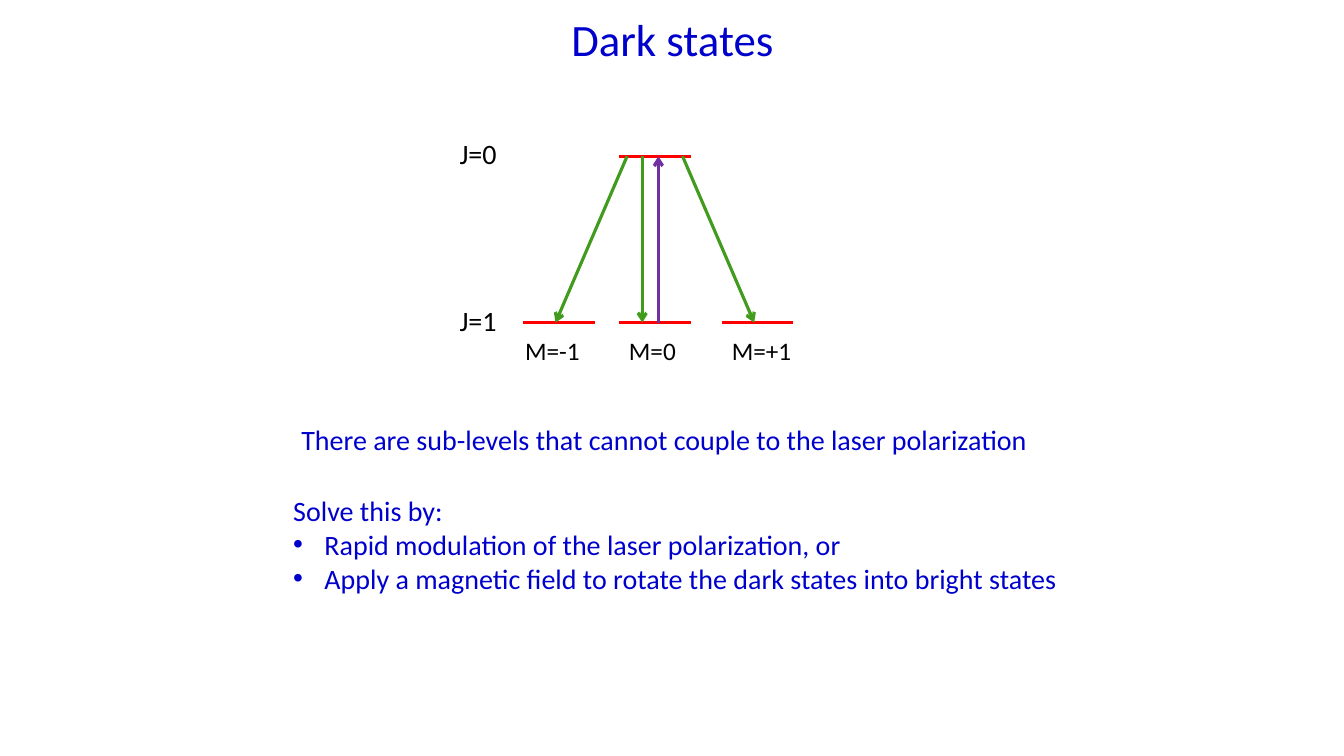
from lxml import etree
from pptx import Presentation
from pptx import util as u
from pptx.dml.color import RGBColor
from pptx.enum import shapes, text
from pptx.oxml.ns import qn

BLUE, BLACK = "0000CC", "000000"
RED, GREEN, PURPLE = "FF0000", "419B1D", "7030A0"
UPPER_Y, LOWER_Y = 1.55, 3.2
LEVEL_WIDTH = 0.71


def rgb(hex_colour):
    return RGBColor.from_string(hex_colour)


def add_text(slide, box, lines, size, colour, wrap=True,
             align=text.PP_ALIGN.LEFT, anchor=text.MSO_ANCHOR.TOP):
    label = slide.shapes.add_textbox(*(u.Inches(v) for v in box))
    frame = label.text_frame
    frame.text = "\n".join(lines)
    frame.word_wrap = wrap
    frame.vertical_anchor = anchor
    for paragraph in frame.paragraphs:
        paragraph.alignment = align
        for run in paragraph.runs:
            run.font.name = "Calibri"
            run.font.size = u.Pt(size)
            run.font.color.rgb = rgb(colour)
    return frame


def add_bullet(paragraph, indent=0.31):
    properties = paragraph._p.get_or_add_pPr()
    properties.set("marL", str(u.Inches(indent)))
    properties.set("indent", str(-u.Inches(indent)))
    etree.SubElement(properties, qn("a:buFont"), typeface="Arial")
    etree.SubElement(properties, qn("a:buChar"), char="•")


def add_line(slide, start, end, colour, arrow=False):
    line = slide.shapes.add_connector(
        shapes.MSO_CONNECTOR.STRAIGHT, *(u.Inches(v) for v in (*start, *end)))
    line.line.color.rgb = rgb(colour)
    line.line.width = u.Pt(2.25)
    if arrow:
        etree.SubElement(line.line._get_or_add_ln(), qn("a:tailEnd"), type="arrow")
    etree.SubElement(line._element.spPr, qn("a:effectLst"))


def add_level(slide, left, y):
    add_line(slide, (left, y), (left + LEVEL_WIDTH, y), RED)


def main():
    prs = Presentation()
    prs.slide_width, prs.slide_height = u.Inches(13.33), u.Inches(7.5)
    slide = prs.slides.add_slide(prs.slide_layouts[6])

    # Energy levels
    for left in (5.19, 6.14, 7.16):
        add_level(slide, left, LOWER_Y)
    add_level(slide, 6.14, UPPER_Y)
    for name, y in (("J=1", LOWER_Y), ("J=0", UPPER_Y)):
        add_text(slide, (4.46, y - 0.24, 0.57, 0.44), [name], 20, BLACK, wrap=False)

    # Laser excitation and spontaneous decays
    add_line(slide, (6.53, LOWER_Y), (6.53, UPPER_Y), PURPLE, arrow=True)
    for upper_x, lower_x in ((6.37, 6.37), (6.22, 5.51), (6.77, 7.48)):
        add_line(slide, (upper_x, UPPER_Y), (lower_x, LOWER_Y), GREEN, arrow=True)

    # Sub-level names
    for name, left, width in (("M=-1", 5.11, 0.75), ("M=0", 6.14, 0.67),
                              ("M=+1", 7.16, 0.8)):
        add_text(slide, (left, 3.28, width, 0.4), [name], 18, BLACK, wrap=False)

    # Title and explanation
    add_text(slide, (1.67, 0.05, 10, 0.66), ["Dark states"], 32, BLUE,
             align=text.PP_ALIGN.CENTER, anchor=text.MSO_ANCHOR.MIDDLE)
    add_text(slide, (2.89, 4.14, 7.4, 0.44),
             ["There are sub-levels that cannot couple to the laser polarization"],
             20, BLUE)
    remedies = add_text(slide, (2.81, 4.85, 7.86, 1.11), [
        "Solve this by:",
        "Rapid modulation of the laser polarization, or",
        "Apply a magnetic field to rotate the dark states into bright states",
    ], 20, BLUE, wrap=False)
    for remedy in remedies.paragraphs[1:]:
        add_bullet(remedy)

    prs.save("out.pptx")


if __name__ == "__main__":
    main()
